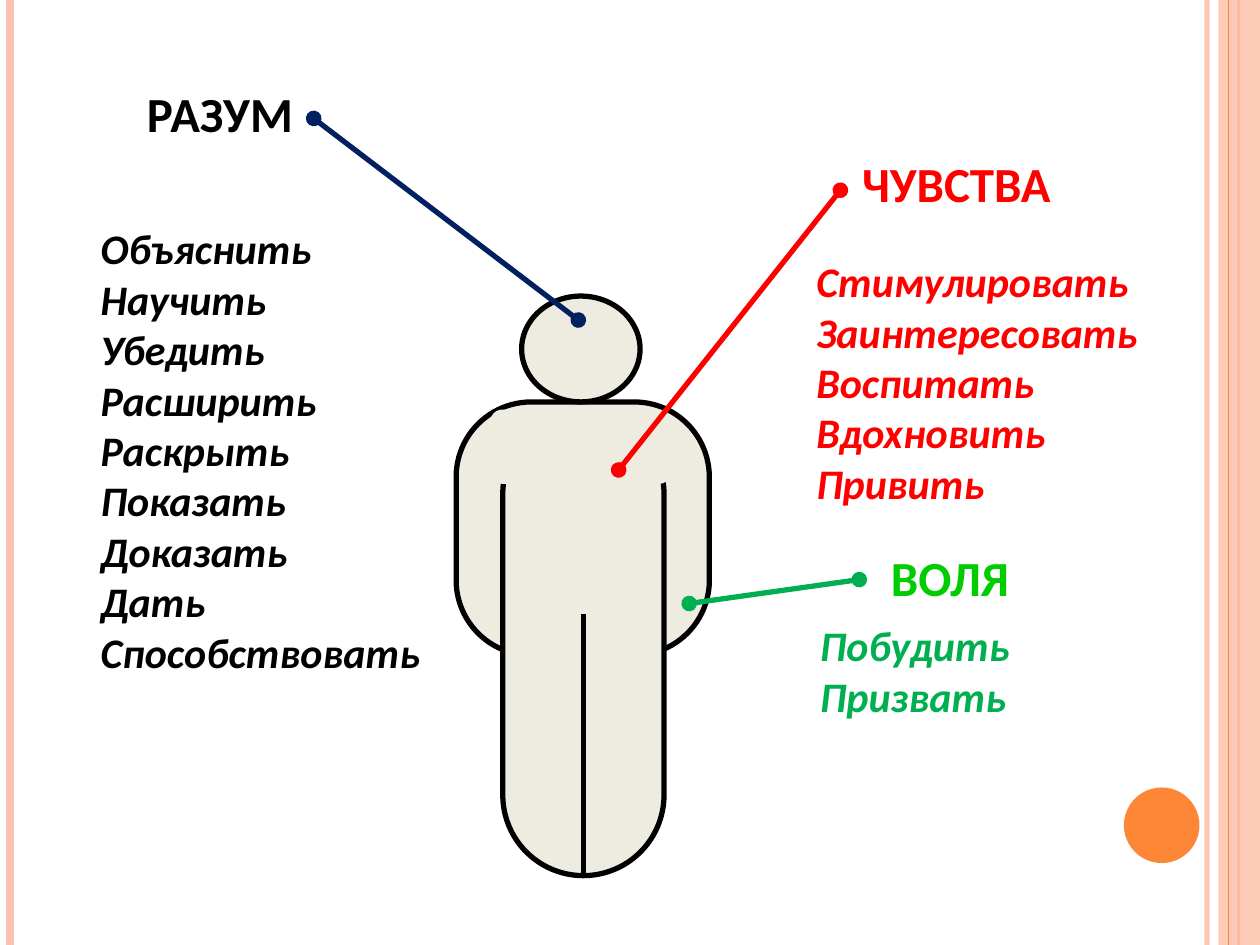
from pptx import Presentation
from pptx.dml.color import RGBColor
from pptx.enum import shapes, text
from pptx.oxml.ns import qn
from pptx.util import Inches, Pt
from lxml import etree

BLACK = RGBColor(0x00, 0x00, 0x00)
WHITE = RGBColor(0xFF, 0xFF, 0xFF)
RED = RGBColor(0xFF, 0x00, 0x00)
LIME = RGBColor(0x00, 0xCC, 0x00)
GREEN = RGBColor(0x00, 0xB0, 0x50)
NAVY = RGBColor(0x00, 0x20, 0x60)
BODY = RGBColor(0xEE, 0xEC, 0xE1)
PEACH = RGBColor(0xFE, 0xC3, 0xAE)
ORANGE = RGBColor(0xFE, 0x86, 0x37)

KIND = shapes.MSO_SHAPE
ALIGN = text.PP_ALIGN
W, H = 10, 7.5

# Content: box, lines, colour, alignment
TITLES = [
    ((0.94, 0.61, 1.61, 0.49), ["РАЗУМ"], BLACK, ALIGN.CENTER),
    ((6.67, 1.17, 1.84, 0.61), ["ЧУВСТВА"], RED, ALIGN.CENTER),
    ((6.88, 4.3, 1.32, 0.54), ["ВОЛЯ"], LIME, ALIGN.CENTER),
]
VERBS = [
    ((0.7, 1.72, 2.81, 3.91),
     ["Объяснить", "Научить", "Убедить", "Расширить", "Раскрыть",
      "Показать", "Доказать", "Дать", "Способствовать"], BLACK, ALIGN.LEFT),
    ((6.38, 1.98, 2.92, 2.24),
     ["Стимулировать", "Заинтересовать", "Воспитать", "Вдохновить", "Привить"],
     RED, ALIGN.JUSTIFY),
    ((6.41, 4.87, 1.73, 0.83), ["Побудить", "Призвать"], GREEN, ALIGN.JUSTIFY),
]
TITLE_FONT = {"size": Pt(28), "bold": True, "name": "Calibri"}
VERB_FONT = {"size": Pt(24), "bold": True, "italic": True, "name": "Calibri"}

# Pointers: from, to, colour
POINTERS = [
    ((4.59, 2.54), (2.49, 0.94), NAVY),
    ((4.91, 3.73), (6.67, 1.51), RED),
    ((6.82, 4.6), (5.47, 4.79), GREEN),
]

prs = Presentation()
prs.slide_width, prs.slide_height = Inches(W), Inches(H)
s = prs.slides.add_slide(prs.slide_layouts[6])


def set_alpha(fill, percent):
    color = fill._xPr.find(qn("a:solidFill"))[0]
    etree.SubElement(color, qn("a:alpha"), val=str(percent * 1000))


def add_shape(kind, box, fill, line=None, adj=None):
    sp = s.shapes.add_shape(kind, *map(Inches, box))
    sp.shadow.inherit = False
    sp.fill.solid()
    sp.fill.fore_color.rgb = fill
    if line is None:
        sp.line.fill.background()
    else:
        sp.line.color.rgb = line
        sp.line.width = Pt(3)
    if adj is not None:
        sp.adjustments[0] = adj
    return sp


def add_line(start, end, color, width=3, alpha=None, dots=False):
    cx = s.shapes.add_connector(shapes.MSO_CONNECTOR.STRAIGHT,
                                *map(Inches, (*start, *end)))
    cx.line.color.rgb = color
    cx.line.width = Pt(width)
    if alpha:
        set_alpha(cx.line.fill, alpha)
    if dots:
        for end_tag in ("a:headEnd", "a:tailEnd"):
            etree.SubElement(cx.line._get_or_add_ln(), qn(end_tag), type="oval")
    etree.SubElement(cx._element.spPr, qn("a:effectLst"))


def add_text(box, lines, color, align, font):
    tf = add_shape(KIND.RECTANGLE, box, WHITE).text_frame
    tf.word_wrap = True
    tf.vertical_anchor = text.MSO_ANCHOR.TOP
    for i, line in enumerate(lines):
        p = tf.paragraphs[0] if i == 0 else tf.add_paragraph()
        p.alignment = align
        r = p.add_run()
        r.text = line
        r.font.color.rgb = color
        for name, value in font.items():
            setattr(r.font, name, value)


# Side stripes and corner disc
add_line((9.58, 0), (9.58, H), PEACH, 3, alpha=93)
add_line((0.08, 0), (0.08, H), PEACH, 4.5)
add_line((9.83, 0), (9.83, H), ORANGE, 1.5)
band = add_shape(KIND.RECTANGLE, (9.67, 0, 0.33, H), PEACH)
set_alpha(band.fill, 87)
add_line((9.75, 0), (9.75, H), ORANGE, 0.75)
add_shape(KIND.OVAL, (8.92, 6.25, 0.6, 0.6), ORANGE)

# Verb lists
for block in VERBS:
    add_text(*block, VERB_FONT)

# Human figure: arms, torso with legs, leg divider, shoulders, head
add_shape(KIND.ROUNDED_RECTANGLE, (3.62, 3.19, 2.01, 2.01), BODY, BLACK, 0.296)
add_shape(KIND.ROUNDED_RECTANGLE, (3.99, 3.28, 1.28, 3.67), BODY, BLACK, 0.5)
add_line((4.63, 4.87), (4.63, 6.94), BLACK)
add_shape(KIND.ROUNDED_RECTANGLE, (3.89, 3.25, 1.44, 0.59), BODY, adj=0.167)
add_shape(KIND.OVAL, (4.14, 2.35, 0.94, 0.84), BODY, BLACK)

# Titles and pointers
for block in TITLES:
    add_text(*block, TITLE_FONT)
for start, end, color in POINTERS:
    add_line(start, end, color, dots=True)

prs.save("out.pptx")
